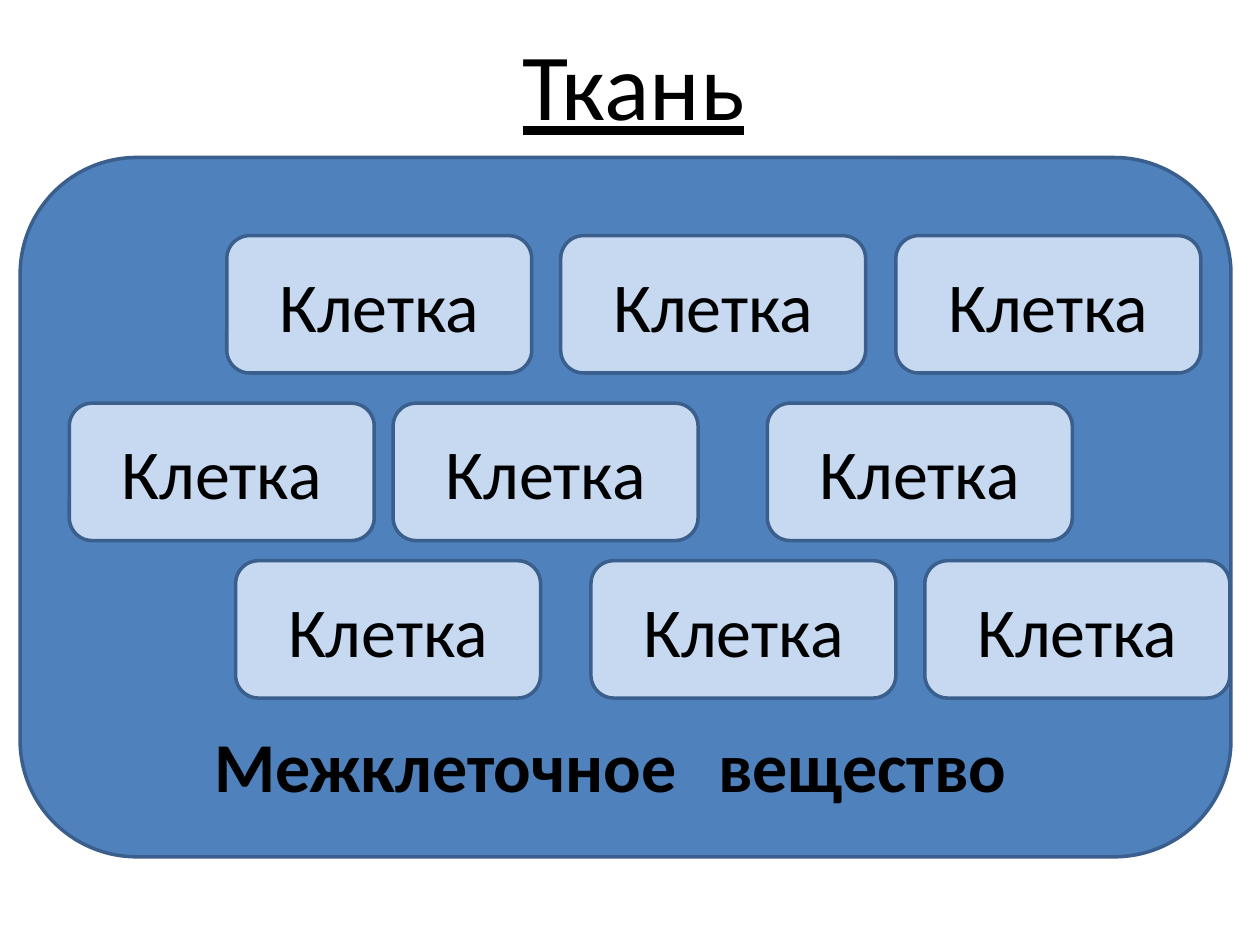
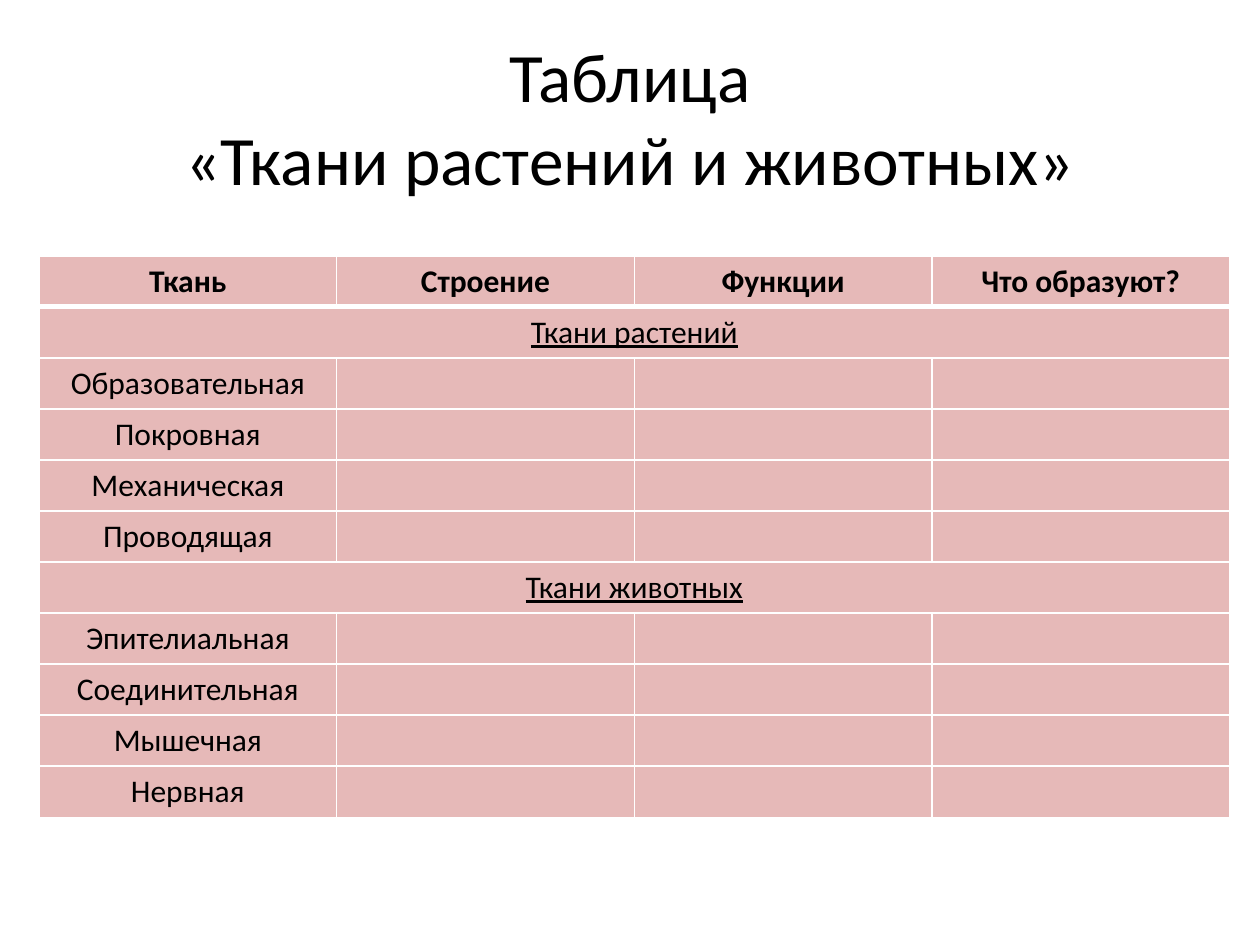
from lxml import etree
from pptx import Presentation
from pptx.dml.color import RGBColor
from pptx.enum import shapes, text
from pptx.oxml import ns
from pptx.util import Inches, Pt

FONT = "Calibri"
BLACK = "000000"
WHITE = "FFFFFF"
TISSUE_FILL = "4F81BD"
CELL_FILL = "C6D9F1"
OUTLINE = "3A5F8C"
TABLE_FILL = "E6B9B8"

CELL_ROWS = [
    (1.87, [1.8, 4.45, 7.11]),
    (3.2, [0.55, 3.12, 6.09]),
    (4.45, [1.87, 4.69, 7.34]),
]
HEADERS = ["Ткань", "Строение", "Функции", "Что образуют?"]
TISSUE_GROUPS = {
    "Ткани растений": ["Образовательная", "Покровная", "Механическая", "Проводящая"],
    "Ткани животных": ["Эпителиальная", "Соединительная", "Мышечная", "Нервная"],
}


def color(value):
    return RGBColor.from_string(value)


def write(frame, words, size=18, bold=False, underline=False, centered=True,
          anchor=None, indent=0, tab=None):
    frame.word_wrap = True
    if anchor is not None:
        frame.vertical_anchor = anchor
    para = frame.paragraphs[0]
    properties = para._p.get_or_add_pPr()
    if indent:
        properties.set("marL", str(Inches(indent)))
        properties.set("indent", "0")
    if tab:
        tabs = etree.SubElement(properties, ns.qn("a:tabLst"))
        etree.SubElement(tabs, ns.qn("a:tab"), pos=str(Inches(tab)), algn="l")
    para.text = words
    para.alignment = text.PP_ALIGN.CENTER if centered else text.PP_ALIGN.LEFT
    for span in para.runs:
        span.font.name = FONT
        span.font.size = Pt(size)
        span.font.bold = bold
        span.font.underline = underline
        span.font.color.rgb = color(BLACK)


def add_title(page, words, left, top, width, height, **style):
    box = page.shapes.add_textbox(Inches(left), Inches(top), Inches(width), Inches(height))
    write(box.text_frame, words, **style)


def add_rounded_box(page, left, top, width, height, fill):
    box = page.shapes.add_shape(shapes.MSO_SHAPE.ROUNDED_RECTANGLE, Inches(left),
                                Inches(top), Inches(width), Inches(height))
    box.shadow.inherit = False
    box.fill.solid()
    box.fill.fore_color.rgb = color(fill)
    box.line.color.rgb = color(OUTLINE)
    box.line.width = Pt(2)
    return box


def style_cell(cell, top, bottom):
    properties = cell._tc.get_or_add_tcPr()
    for side, width in (("L", 1), ("R", 1), ("T", top), ("B", bottom)):
        line = etree.SubElement(properties, ns.qn(f"a:ln{side}"), w=str(Pt(width)))
        fill = etree.SubElement(line, ns.qn("a:solidFill"))
        etree.SubElement(fill, ns.qn("a:srgbClr"), val=WHITE)
    cell.fill.solid()
    cell.fill.fore_color.rgb = color(TABLE_FILL)


def add_tissue_table(page, left, top, width, height):
    rows = [HEADERS]
    for group, tissues in TISSUE_GROUPS.items():
        rows += [[group]] + [[tissue] for tissue in tissues]
    table = page.shapes.add_table(len(rows), len(HEADERS), Inches(left), Inches(top),
                                  Inches(width), Inches(height)).table
    table.horz_banding = False
    for row, labels in enumerate(rows):
        is_group = labels[0] in TISSUE_GROUPS
        for column in range(len(HEADERS)):
            style_cell(table.cell(row, column), 3 if row == 1 else 1, 3 if row == 0 else 1)
        if is_group:
            table.cell(row, 0).merge(table.cell(row, len(HEADERS) - 1))
        for column, label in enumerate(labels):
            write(table.cell(row, column).text_frame, label, bold=row == 0,
                  underline=is_group)


def build_tissue_diagram(page):
    tissue = add_rounded_box(page, 0.16, 1.25, 9.61, 5.55, TISSUE_FILL)
    tissue.text_frame.margin_bottom = Inches(0.13)
    write(tissue.text_frame, "Межклеточное\tвещество", size=40, bold=True,
          centered=False, anchor=text.MSO_ANCHOR.BOTTOM, indent=1.17, tab=5.36)
    add_title(page, "Ткань", 3.05, 0.16, 4.62, 1.01, size=54, underline=True,
              centered=False, indent=1)
    for top, lefts in CELL_ROWS:
        for left in lefts:
            cell = add_rounded_box(page, left, top, 2.42, 1.09, CELL_FILL)
            write(cell.text_frame, "Клетка", size=40, anchor=text.MSO_ANCHOR.MIDDLE)


def build_tissue_summary(page):
    add_title(page, "Таблица\v«Ткани растений и животных»", 0.5, 0.3, 9, 1.25,
              size=39.6, anchor=text.MSO_ANCHOR.MIDDLE)
    add_tissue_table(page, 0.31, 2.03, 9.45, 4.46)


def main():
    deck = Presentation()
    deck.slide_width = Inches(10)
    deck.slide_height = Inches(7.5)
    for build in (build_tissue_diagram, build_tissue_summary):
        build(deck.slides.add_slide(deck.slide_layouts[6]))
    deck.save("out.pptx")


if __name__ == "__main__":
    main()
